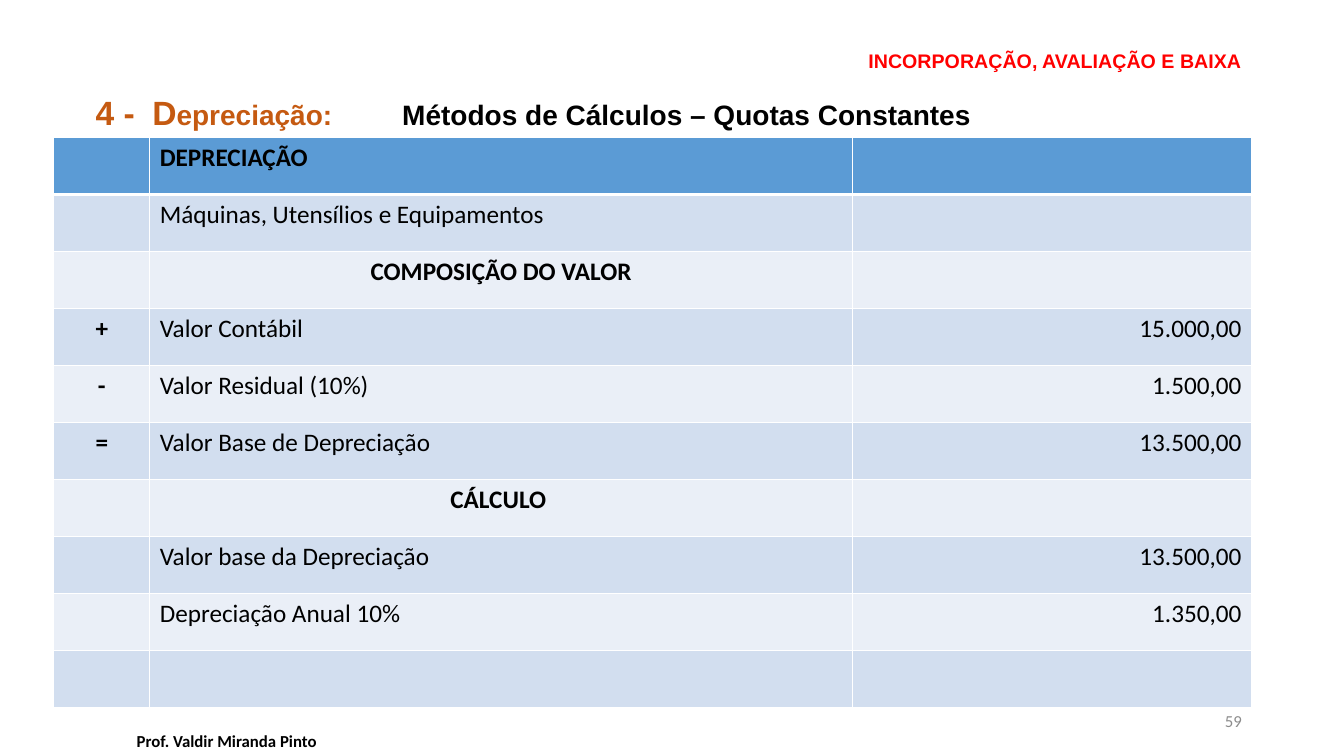
import pptx
import pptx.util
import pptx.dml.color
import pptx.enum.text
import pptx.oxml
import pptx.oxml.ns

Pt = pptx.util.Pt
Align = pptx.enum.text.PP_ALIGN
Anchor = pptx.enum.text.MSO_ANCHOR

COLORS = {"red": "FF0000", "rust": "C55A11", "black": "000000", "gray": "8C8C8C",
          "white": "FFFFFF", "blue": "5B9BD5", "dark": "D2DEEF", "light": "EAEFF7"}

TITLE = "INCORPORAÇÃO, AVALIAÇÃO E BAIXA"
HEADING = [("4 -\tD", 24, "rust"), ("epreciação:\t", 20, "rust"),
           ("Métodos de Cálculos – Quotas Constantes", 20, "black")]
TABS = [40.5, 219]
AUTHOR = "Prof. Valdir Miranda Pinto"
NUMBER = "59"
ROWS = [
    ("", "DEPRECIAÇÃO", ""),
    ("", "Máquinas, Utensílios e Equipamentos", ""),
    ("", "COMPOSIÇÃO DO VALOR", ""),
    ("+", "Valor Contábil", "15.000,00"),
    ("-", "Valor Residual (10%)", "1.500,00"),
    ("=", "Valor Base de Depreciação", "13.500,00"),
    ("", "CÁLCULO ", ""),
    ("", "Valor base da Depreciação", "13.500,00"),
    ("", "Depreciação Anual 10%", "1.350,00"),
    ("", "", ""),
]
CENTERED = (2, 6)
WIDTHS = [68.5, 502, 285]
HEIGHT = 40.75


def style(run, size, color, bold=False, face="Calibri"):
    font = run.font
    font.name, font.size, font.bold = face, Pt(size), bold
    font.color.rgb = pptx.dml.color.RGBColor.from_string(COLORS[color])


def place(shape, left, top, width, height):
    shape.left, shape.top = Pt(left), Pt(top)
    shape.width, shape.height = Pt(width), Pt(height)


def add_text(slide, box, text, align, color, bold):
    frame = slide.shapes.add_textbox(*map(Pt, box)).text_frame
    frame.word_wrap = True
    frame.vertical_anchor = Anchor.MIDDLE
    para = frame.paragraphs[0]
    para.text, para.alignment = text, align
    style(para.runs[0], 12, color, bold)


def add_border(cell, side, width):
    cell._tc.get_or_add_tcPr().append(pptx.oxml.parse_xml(
        f'<a:{side} {pptx.oxml.ns.nsdecls("a")} w="{Pt(width)}"><a:solidFill>'
        f'<a:srgbClr val="{COLORS["white"]}"/></a:solidFill></a:{side}>'))


def add_heading(slide):
    frame = slide.shapes.add_textbox(*map(Pt, (61.2, 65.5, 839.5, 35.3))).text_frame
    frame.word_wrap = True
    para = frame.paragraphs[0]
    stops = "".join(f'<a:tab pos="{Pt(stop)}" algn="l"/>' for stop in TABS)
    para._p.get_or_add_pPr().append(pptx.oxml.parse_xml(
        f'<a:tabLst {pptx.oxml.ns.nsdecls("a")}>{stops}</a:tabLst>'))
    para.line_spacing = 0.9
    for text, size, color in HEADING:
        run = para.add_run()
        run.text = text
        style(run, size, color, True, "Arial")


def add_table(slide):
    box = map(Pt, (38.5, 98.2, sum(WIDTHS), HEIGHT * len(ROWS)))
    table = slide.shapes.add_table(len(ROWS), len(WIDTHS), *box).table
    for column, width in zip(table.columns, WIDTHS):
        column.width = Pt(width)
    for i, texts in enumerate(ROWS):
        table.rows[i].height = Pt(HEIGHT)
        fill = "blue" if i == 0 else "dark" if i % 2 else "light"
        for j, text in enumerate(texts):
            cell = table.cell(i, j)
            for side in ("lnL", "lnR", "lnT", "lnB"):
                thick = (i, side) in ((0, "lnB"), (1, "lnT"))
                add_border(cell, side, 3 if thick else 1)
            cell.fill.solid()
            cell.fill.fore_color.rgb = pptx.dml.color.RGBColor.from_string(COLORS[fill])
            para = cell.text_frame.paragraphs[0]
            para.font.size = Pt(18)
            if not text:
                continue
            para.text = text
            middle = j == 0 or (j == 1 and i in CENTERED)
            para.alignment = Align.CENTER if middle else Align.RIGHT if j == 2 else Align.LEFT
            style(para.runs[0], 18, "black", middle or i == 0)


def main():
    deck = pptx.Presentation()
    deck.slide_width, deck.slide_height = Pt(960), Pt(540)
    slide = deck.slides.add_slide(deck.slide_layouts[5])
    title = slide.shapes.title
    place(title, 77, 31, 817, 27.4)
    title.text_frame.text = TITLE
    title.text_frame.vertical_anchor = Anchor.MIDDLE
    para = title.text_frame.paragraphs[0]
    para.alignment, para.line_spacing = Align.RIGHT, 0.9
    style(para.runs[0], 14, "red", True, "Arial")
    add_heading(slide)
    add_text(slide, (0, 520, 324, 18.7), AUTHOR, Align.CENTER, "black", True)
    add_text(slide, (678.2, 500.4, 216, 28.8), NUMBER, Align.RIGHT, "gray", False)
    add_table(slide)
    deck.save("out.pptx")


if __name__ == "__main__":
    main()
